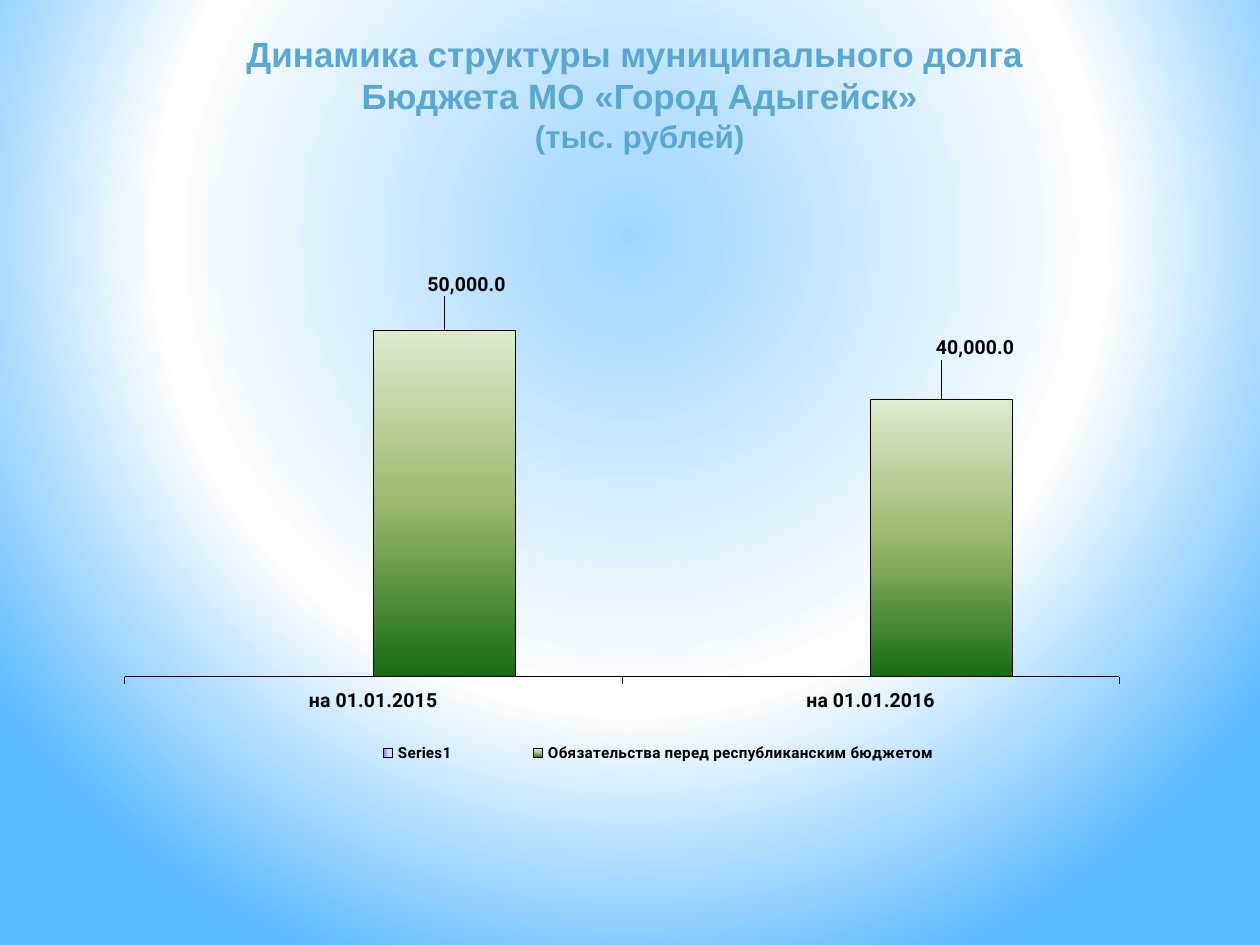
from typing import NamedTuple

from lxml import etree
from pptx import Presentation
from pptx.chart.data import CategoryChartData
from pptx.dml.color import RGBColor
from pptx.enum.chart import (XL_CHART_TYPE, XL_LABEL_POSITION, XL_LEGEND_POSITION,
                             XL_TICK_LABEL_POSITION, XL_TICK_MARK)
from pptx.enum.text import MSO_ANCHOR, MSO_AUTO_SIZE, PP_ALIGN
from pptx.oxml.ns import qn
from pptx.util import Cm, Pt

COLUMNS = XL_CHART_TYPE.COLUMN_CLUSTERED
OUTSIDE_END = XL_LABEL_POSITION.OUTSIDE_END
LEGEND_RIGHT = XL_LEGEND_POSITION.RIGHT
LABELS_LOW = XL_TICK_LABEL_POSITION.LOW
TICK_OUTSIDE = XL_TICK_MARK.OUTSIDE
TITLE_ONLY = 5

BLACK = RGBColor(0x00, 0x00, 0x00)
TITLE_BLUE = RGBColor(0x59, 0xA8, 0xD1)
SKY = RGBColor(0x9E, 0xD5, 0xFF)
WHITE = RGBColor(0xFF, 0xFF, 0xFF)
AZURE = RGBColor(0x5B, 0xB9, 0xFF)
LAVENDER = RGBColor(0x84, 0x88, 0xC4)
PALE_BLUE = RGBColor(0xD4, 0xDE, 0xFF)
GREY_GREEN = RGBColor(0x96, 0xAB, 0x94)
PALE_GREEN = RGBColor(0xDD, 0xEB, 0xCF)
OLIVE = RGBColor(0x9C, 0xB8, 0x6E)
DARK_GREEN = RGBColor(0x15, 0x6B, 0x13)

CHART_FONT = "Roboto"
NUMBER_FORMAT = "#,##0.0"
CATEGORIES = ("на 01.01.2015", "на 01.01.2016")

Stops = tuple[tuple[int, RGBColor], ...]


class TitleLine(NamedTuple):
    text: str
    size: int


class DebtSeries(NamedTuple):
    name: str
    values: tuple
    stops: Stops
    angle: int
    label_offsets: tuple = ()


TITLE_LINES = (
    TitleLine("Динамика структуры муниципального долга ", 20),
    TitleLine("Бюджета МО «Город Адыгейск»", 20),
    TitleLine("(тыс. рублей)", 18),
)
SERIES = (
    DebtSeries("Series1", (None, None),
               ((0, LAVENDER), (53, PALE_BLUE), (83, PALE_BLUE), (100, GREY_GREEN)), 0),
    DebtSeries("Обязательства перед республиканским бюджетом", (50000, 40000),
               ((0, PALE_GREEN), (50, OLIVE), (100, DARK_GREEN)), 90,
               ((0.02, -0.05), (0.03, -0.06))),
)


def set_gradient(fill, parent, stops: Stops, angle: int | None = None) -> None:
    """Fill with a linear gradient, or a circular one when no angle is given."""
    fill.gradient()
    gradient = parent.find(".//" + qn("a:gradFill"))
    for child in list(gradient):
        gradient.remove(child)
    stop_list = etree.SubElement(gradient, qn("a:gsLst"))
    for position, color in stops:
        stop = etree.SubElement(stop_list, qn("a:gs"), pos=str(position * 1000))
        etree.SubElement(stop, qn("a:srgbClr"), val=str(color))
    if angle is None:
        circle = etree.SubElement(gradient, qn("a:path"), path="circle")
        etree.SubElement(circle, qn("a:fillToRect"), l="20000", t="10000", r="20000", b="60000")
    else:
        etree.SubElement(gradient, qn("a:lin"), ang=str(angle * 60000), scaled="0")


def set_layout(parent, index: int, **values) -> None:
    """Place a chart part by hand, in fractions of the chart size."""
    for old in parent.findall(qn("c:layout")):
        parent.remove(old)
    layout = etree.Element(qn("c:layout"))
    manual = etree.SubElement(layout, qn("c:manualLayout"))
    for name, value in values.items():
        etree.SubElement(manual, qn(f"c:{name}"), val=str(value))
    parent.insert(index, layout)


def set_font(font, size: float, bold: bool = True) -> None:
    font.name = CHART_FONT
    font.size = Pt(size)
    font.bold = bold
    font.color.rgb = BLACK


def add_title(slide) -> None:
    title = slide.shapes.title
    title.left, title.top, title.width, title.height = Cm(1.3), Cm(0.53), Cm(23.19), Cm(2.74)
    frame = title.text_frame
    frame.text = "\n".join(line.text for line in TITLE_LINES)
    frame.word_wrap = True
    frame.vertical_anchor = MSO_ANCHOR.TOP
    frame.auto_size = MSO_AUTO_SIZE.SHAPE_TO_FIT_TEXT
    for para, line in zip(frame.paragraphs, TITLE_LINES):
        para.alignment = PP_ALIGN.CENTER
        para.font.name = "Arial"
        para.font.size = Pt(line.size)
        para.font.bold = True
        para.font.color.rgb = TITLE_BLUE


def style_series(series, debt: DebtSeries) -> None:
    set_gradient(series.format.fill, series._element, debt.stops, debt.angle)
    series.format.line.color.rgb = BLACK
    series.format.line.width = Pt(0.75)
    labels = series.data_labels
    labels.show_value = True
    labels.number_format = NUMBER_FORMAT
    labels.number_format_is_linked = False
    labels.position = OUTSIDE_END
    set_font(labels.font, 11.1)
    for index, (x, y) in enumerate(debt.label_offsets):
        label = series.points[index].data_label
        set_font(label.font, 11.1)
        label.position = OUTSIDE_END
        set_layout(label._get_or_add_dLbl(), 1, x=x, y=y)


def add_debt_chart(slide) -> None:
    data = CategoryChartData(number_format=NUMBER_FORMAT)
    data.categories = CATEGORIES
    for debt in SERIES:
        data.add_series(debt.name, debt.values)
    chart = slide.shapes.add_chart(COLUMNS, Cm(2.13), Cm(4.14), Cm(22.53), Cm(11.63), data).chart
    chart.has_title = False
    set_font(chart.font, 8.3, bold=False)

    # Columns
    plot = chart.plots[0]
    plot.gap_width = 150
    plot.overlap = 0
    plot.vary_by_categories = False
    for series, debt in zip(plot.series, SERIES):
        style_series(series, debt)
    set_layout(chart._chartSpace.chart.plotArea, 0, layoutTarget="inner", xMode="edge",
               yMode="edge", x=0.017, y=0.097, w=0.89, h=0.72)

    # Axes
    dates = chart.category_axis
    dates.tick_label_position = LABELS_LOW
    dates.major_tick_mark = TICK_OUTSIDE
    dates.format.line.color.rgb = BLACK
    dates.format.line.width = Pt(0.19)
    set_font(dates.tick_labels.font, 11.1)
    amounts = chart.value_axis
    amounts.minimum_scale = 0
    amounts.maximum_scale = 60000
    amounts.has_major_gridlines = False
    amounts.visible = False

    # Legend
    chart.has_legend = True
    legend = chart.legend
    legend.position = LEGEND_RIGHT
    legend.include_in_layout = False
    set_font(legend.font, 8.7)
    set_layout(legend._element, 1, xMode="edge", yMode="edge", x=0.18, y=0.92, w=0.63, h=0.06)


def main() -> None:
    deck = Presentation()
    deck.slide_width, deck.slide_height = Cm(25.4), Cm(19.05)
    slide = deck.slides.add_slide(deck.slide_layouts[TITLE_ONLY])
    set_gradient(slide.background.fill, slide._element, ((0, SKY), (60, WHITE), (100, AZURE)))
    add_debt_chart(slide)
    add_title(slide)
    deck.save("out.pptx")


if __name__ == "__main__":
    main()
